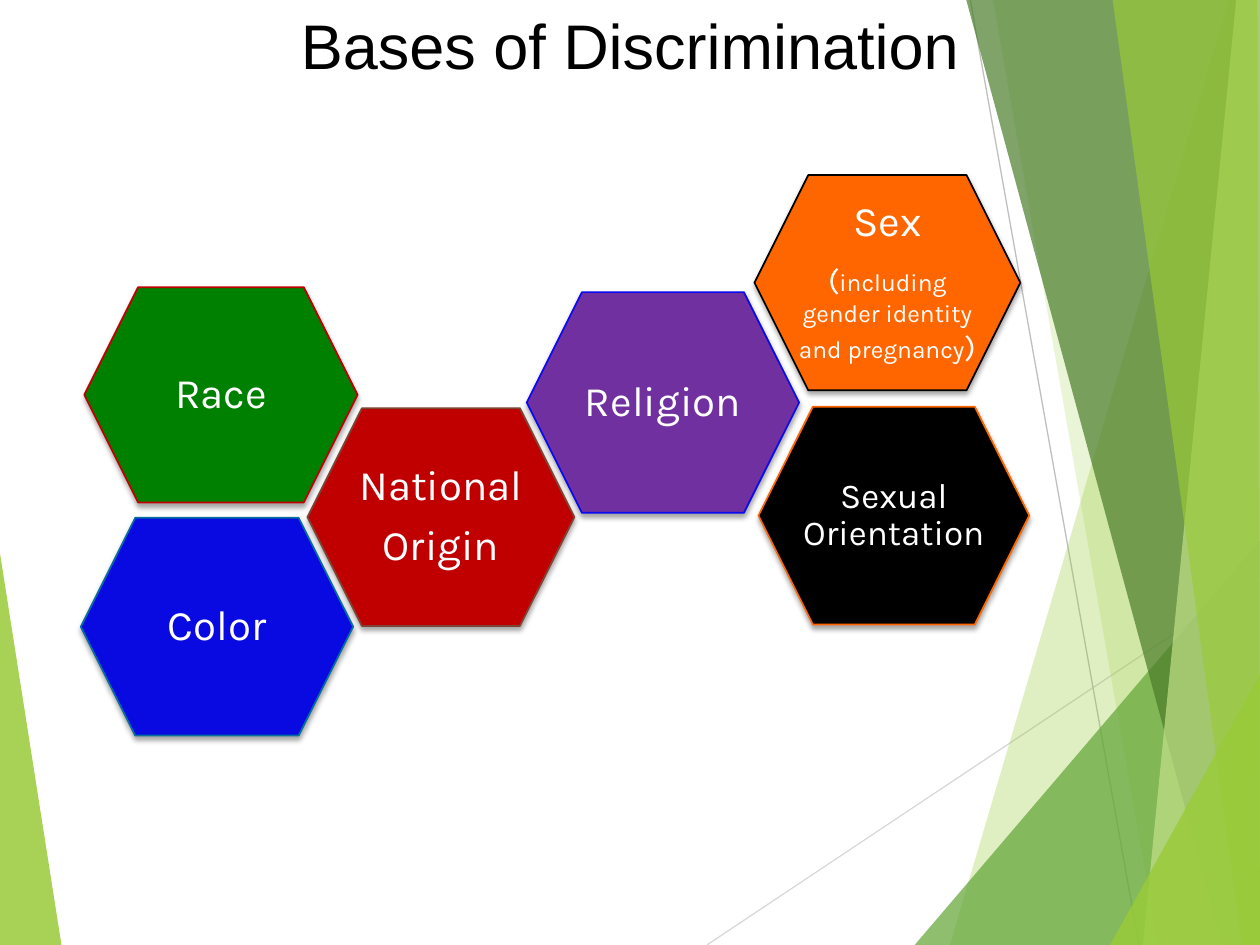
import lxml.etree
import pptx
import pptx.dml.color
import pptx.enum.shapes
import pptx.enum.text
import pptx.oxml.ns
import pptx.util

Cm = pptx.util.Cm
Pt = pptx.util.Pt
RGBColor = pptx.dml.color.RGBColor
qn = pptx.oxml.ns.qn
CENTER = pptx.enum.text.PP_ALIGN.CENTER
ANCHOR = pptx.enum.text.MSO_ANCHOR

WIDTH, HEIGHT = 25.4, 19.05
WHITE = RGBColor(0xFF, 0xFF, 0xFF)
BLACK = RGBColor(0x00, 0x00, 0x00)
LIME = RGBColor(0x99, 0xCB, 0x38)
GREEN = RGBColor(0x63, 0xA5, 0x37)
FOREST = RGBColor(0x4A, 0x7C, 0x29)
PALE_LIME = RGBColor(0xC2, 0xE0, 0x88)
LIGHT_GRAY = RGBColor(0xD9, 0xD9, 0xD9)
MID_GRAY = RGBColor(0xBF, 0xBF, 0xBF)
BLUE = RGBColor(0x09, 0x09, 0xE1)
TEAL = RGBColor(0x05, 0x6E, 0xA0)
PURPLE = RGBColor(0x70, 0x30, 0xA0)
BRIGHT_BLUE = RGBColor(0x0A, 0x0A, 0xF0)
RACE_GREEN = RGBColor(0x00, 0x80, 0x00)
RED = RGBColor(0xC0, 0x00, 0x00)
BROWN = RGBColor(0x7D, 0x43, 0x33)
ORANGE = RGBColor(0xFF, 0x66, 0x00)

# Each paragraph: line spacing, then (text, size) spans
HEXAGONS = [
    ((1.63, 10.44, 5.49, 4.39), BLUE, TEAL, [(0.9, [("Color", 24)])]),
    ((10.62, 5.89, 5.49, 4.45), PURPLE, BRIGHT_BLUE, [(0.9, [("Religion", 24)])]),
    ((1.7, 5.79, 5.51, 4.34), RACE_GREEN, RED, [(0.9, [("Race", 24)])]),
    ((6.2, 8.23, 5.38, 4.39), RED, BROWN,
     [(0.9, [("National", 24)]), (0.9, [("Origin", 24)])]),
    ((15.21, 3.53, 5.36, 4.34), ORANGE, BLACK,
     [(0.9, [("Sex", 24)]),
      (1.0, [("(", 18), ("including gender identity and pregnancy", 14), (")", 18)])]),
    ((15.29, 8.2, 5.46, 4.39), BLACK, ORANGE,
     [(0.9, [("Sexual Orientation", 20)])]),
]


def apply(target, values):
    for name, value in values.items():
        setattr(target, name, value)


def band(top, bottom, top_right=WIDTH):
    """Corners of a shard between a slanted left edge and the slide's right edge."""
    return [(top, 0), (bottom, HEIGHT), (WIDTH, HEIGHT), (top_right, 0)]


def corner(left, top):
    """Corners of a triangle in the slide's bottom right corner."""
    return [(left, HEIGHT), (WIDTH, top), (WIDTH, HEIGHT)]


class SlideBuilder:
    title_font = {"name": "Arial", "size": Pt(36)}
    label_font = {"name": "Karla"}
    label_frame = {
        "word_wrap": True, "vertical_anchor": ANCHOR.MIDDLE,
        "margin_left": 0, "margin_right": 0,
        "margin_top": Cm(0.08), "margin_bottom": Cm(0.08),
    }
    text_inset = 0.15

    def __init__(self, page):
        self.page = page

    def title(self, text):
        box = self.page.shapes.title
        apply(box, {"left": 0, "top": 0, "width": Cm(WIDTH), "height": Cm(2.77)})
        frame = box.text_frame
        frame.text = text
        apply(frame, {"vertical_anchor": ANCHOR.TOP, "word_wrap": True,
                      "auto_size": pptx.enum.text.MSO_AUTO_SIZE.NONE})
        para = frame.paragraphs[0]
        para.alignment = CENTER
        apply(para.runs[0].font, self.title_font)
        para.runs[0].font.color.rgb = BLACK
        box.element.getparent().append(box.element)

    def shard(self, points, color, opacity):
        corners = [(Cm(x), Cm(y)) for x, y in points]
        builder = self.page.shapes.build_freeform(*corners[0])
        builder.add_line_segments(corners[1:], close=True)
        shape = builder.convert_to_shape()
        shape.shadow.inherit = False
        shape.line.fill.background()
        shape.fill.solid()
        shape.fill.fore_color.rgb = color
        tint = shape.element.spPr.find(qn("a:solidFill"))[0]
        lxml.etree.SubElement(tint, qn("a:alpha"), val=str(opacity * 1000))

    def line(self, start, end, color):
        connector = self.page.shapes.add_connector(
            pptx.enum.shapes.MSO_CONNECTOR.STRAIGHT,
            *(Cm(length) for length in start + end))
        connector.line.color.rgb = color
        connector.line.width = Pt(0.75)
        lxml.etree.SubElement(connector.element.spPr, qn("a:effectLst"))

    def hexagon(self, place, fill, outline):
        shape = self.page.shapes.add_shape(
            pptx.enum.shapes.MSO_SHAPE.HEXAGON, *(Cm(length) for length in place))
        shape.fill.solid()
        shape.fill.fore_color.rgb = fill
        shape.line.color.rgb = outline
        shape.line.width = Pt(1)
        shape.shadow.inherit = False
        effects = shape.element.spPr.find(qn("a:effectLst"))
        shadow = lxml.etree.SubElement(
            effects, qn("a:outerShdw"), blurRad=str(Pt(3)), dist=str(Pt(2)),
            dir=str(90 * 60000), rotWithShape="0")
        tint = lxml.etree.SubElement(shadow, qn("a:srgbClr"), val=str(BLACK))
        lxml.etree.SubElement(tint, qn("a:alpha"), val="35000")

    def label(self, place, paragraphs):
        """Centre text in the inner part of the hexagon at place."""
        left, top, width, height = place
        inset, inner = self.text_inset, 1 - 2 * self.text_inset
        box = self.page.shapes.add_textbox(
            Cm(left + inset * width), Cm(top + inset * height),
            Cm(inner * width), Cm(inner * height))
        frame = box.text_frame
        apply(frame, self.label_frame)
        for index, (spacing, spans) in enumerate(paragraphs):
            para = frame.add_paragraph() if index else frame.paragraphs[0]
            largest = max(size for _, size in spans)
            apply(para, {"alignment": CENTER, "line_spacing": spacing,
                         "space_after": Pt(0.35 * largest)})
            for text, size in spans:
                span = para.add_run()
                span.text = text
                apply(span.font, self.label_font)
                span.font.size = Pt(size)
                span.font.color.rgb = WHITE


def main():
    deck = pptx.Presentation()
    apply(deck, {"slide_width": Cm(WIDTH), "slide_height": Cm(HEIGHT)})
    slide = SlideBuilder(deck.slides.add_slide(deck.slide_layouts[5]))

    slide.shard([(0, 11.15), (1.24, HEIGHT), (0, HEIGHT)], LIME, 85)
    slide.line((14.25, HEIGHT), (WIDTH, 11.62), LIGHT_GRAY)
    slide.line((19.56, 0), (22.96, HEIGHT), MID_GRAY)
    for points, color, opacity in [
        (band(24.77, 19.15), LIME, 30),
        (band(20.02, 23.34), LIME, 20),
        (corner(18.44, 10.9), GREEN, 72),
        (band(19.48, 24.64), FOREST, 70),
        (band(24.92, 23.04), PALE_LIME, 70),
        (band(22.43, 25.04, 25.35), LIME, 65),
        (corner(22.38, 13.59), LIME, 80),
    ]:
        slide.shard(points, color, opacity)

    slide.title("Bases of Discrimination")
    for place, fill, outline, paragraphs in HEXAGONS:
        slide.hexagon(place, fill, outline)
        slide.label(place, paragraphs)
    deck.save("out.pptx")


if __name__ == "__main__":
    main()
